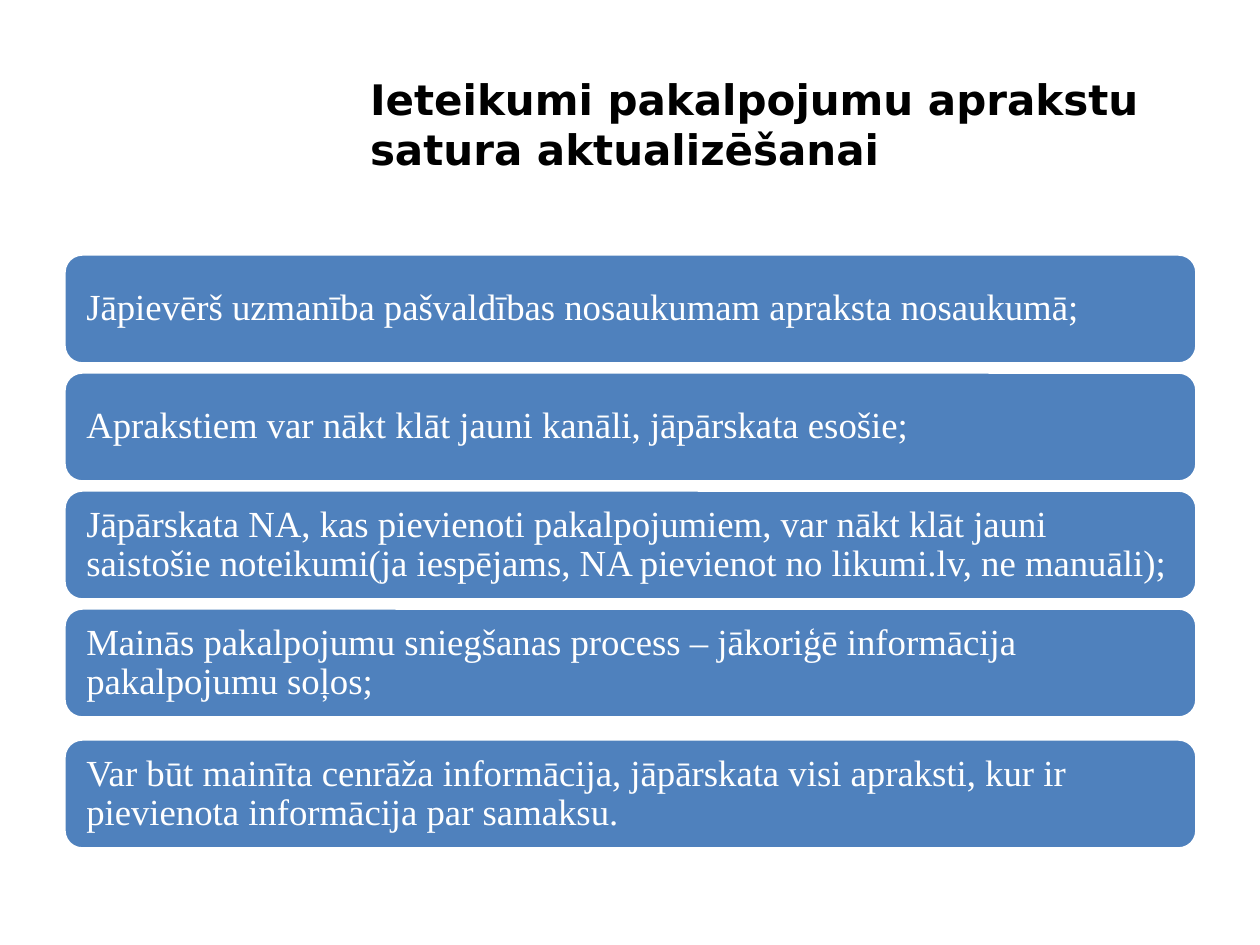
"""Build a slide of recommendations for updating service descriptions."""
from pptx import Presentation
from pptx.dml.color import RGBColor
from pptx.enum.shapes import MSO_SHAPE
from pptx.enum.text import MSO_ANCHOR, PP_ALIGN
from pptx.util import Emu, Pt

ROUNDED = MSO_SHAPE.ROUNDED_RECTANGLE
MIDDLE = MSO_ANCHOR.MIDDLE
LEFT = PP_ALIGN.LEFT
TITLE_ONLY = 5

COLOURS = {"title": "000000", "card": "4F81BD", "white": "FFFFFF"}
TITLE = "Ieteikumi pakalpojumu aprakstu satura aktualizēšanai"
RECOMMENDATIONS = [
    "Jāpievērš uzmanība pašvaldības nosaukumam apraksta nosaukumā;",
    "Aprakstiem var nākt klāt jauni kanāli, jāpārskata esošie;",
    "Jāpārskata NA, kas pievienoti pakalpojumiem, var nākt klāt jauni saistošie "
    "noteikumi(ja iespējams, NA pievienot no likumi.lv, ne manuāli);",
    "Mainās pakalpojumu sniegšanas process – jākoriģē informācija pakalpojumu soļos;",
    "Var būt mainīta cenrāža informācija, jāpārskata visi apraksti, kur ir "
    "pievienota informācija par samaksu.",
]
CARD_LEFT, CARD_TOP, CARD_WIDTH, CARD_HEIGHT = 64, 254, 1133, 110
CARD_PITCH, LAST_CARD_OFFSET = 118, 13


def px(length):
    """Turn whole pixels, 126 to the inch, into EMU."""
    return Emu(round(length * 914400 / 126))


def colour(name):
    """Return the named colour."""
    return RGBColor.from_string(COLOURS[name])


def write_text(shape, text, *, font, size, color, bold=False, spacing=1.0, inset=(13, 6)):
    """Write one left-aligned, vertically centred paragraph into a shape."""
    frame = shape.text_frame
    frame.word_wrap = True
    frame.vertical_anchor = MIDDLE
    frame.margin_left = frame.margin_right = px(inset[0])
    frame.margin_top = frame.margin_bottom = px(inset[1])
    paragraph = frame.paragraphs[0]
    paragraph.alignment = LEFT
    paragraph.line_spacing = spacing
    run = paragraph.add_run()
    run.text = text
    run.font.name = font
    run.font.size = Pt(size)
    run.font.bold = bold
    run.font.color.rgb = colour(color)


def place_title(slide):
    """Move and fill the title placeholder."""
    title = slide.shapes.title
    title.left, title.top, title.width, title.height = map(px, (357, 53, 840, 142))
    write_text(title, TITLE, font="DejaVu Sans", size=24, color="title", bold=True)


def add_card(slide, top, text):
    """Add a rounded card holding one recommendation."""
    card = slide.shapes.add_shape(
        ROUNDED, px(CARD_LEFT), px(top), px(CARD_WIDTH), px(CARD_HEIGHT))
    card.shadow.inherit = False
    card.fill.solid()
    card.fill.fore_color.rgb = colour("card")
    card.line.color.rgb = colour("white")
    card.line.width = Pt(2)
    write_text(card, text, font="Times New Roman", size=21, color="white",
               spacing=0.9, inset=(17, 11))


def main():
    """Build and save the presentation."""
    presentation = Presentation()
    presentation.slide_width, presentation.slide_height = px(1260), px(945)
    slide = presentation.slides.add_slide(presentation.slide_layouts[TITLE_ONLY])
    place_title(slide)
    last = len(RECOMMENDATIONS) - 1
    for index, text in enumerate(RECOMMENDATIONS):
        offset = LAST_CARD_OFFSET if index == last else 0
        add_card(slide, CARD_TOP + index * CARD_PITCH + offset, text)
    presentation.save("out.pptx")


if __name__ == "__main__":
    main()
